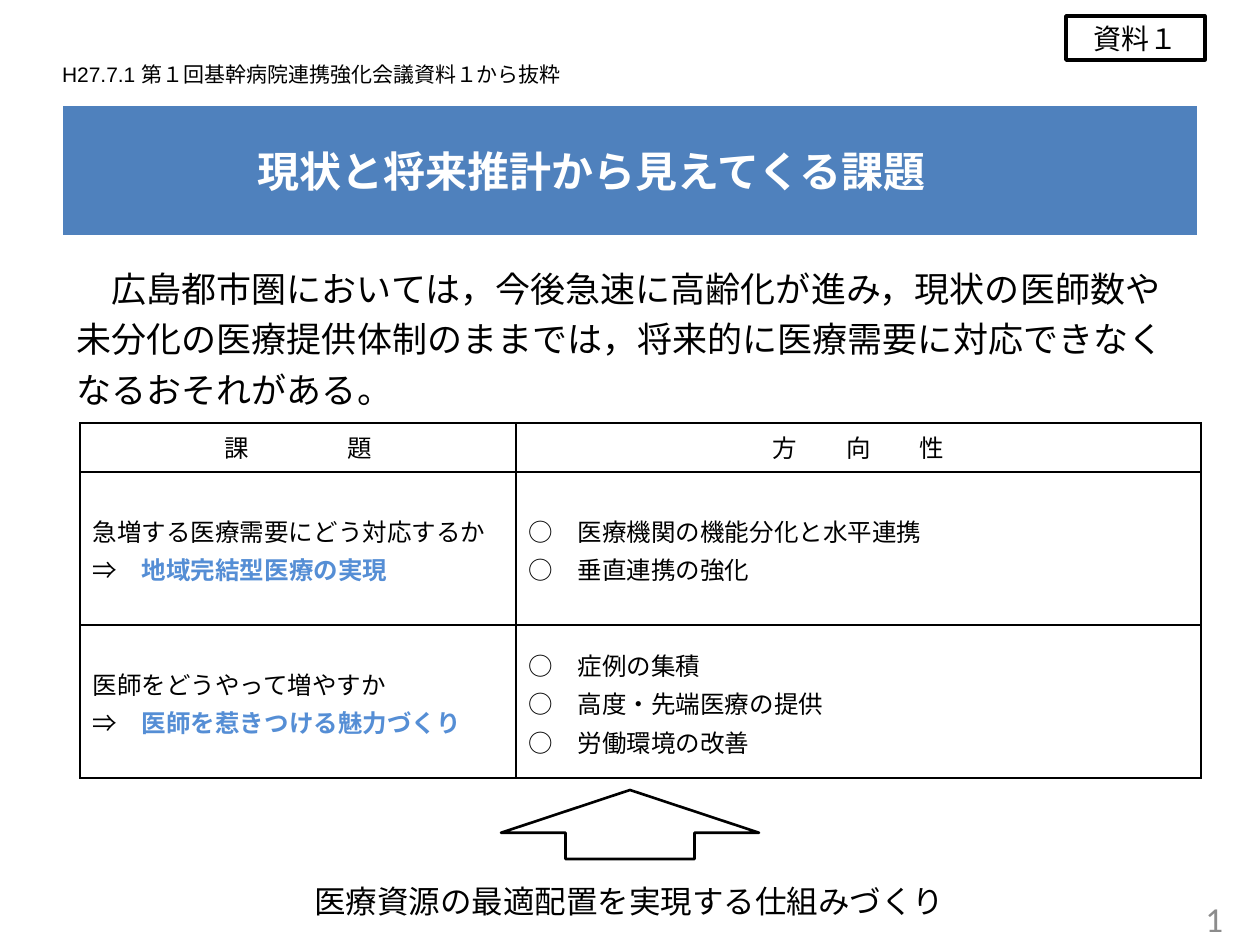
from typing import NamedTuple, Optional

from lxml.etree import SubElement
from pptx import Presentation
from pptx.dml.color import RGBColor
from pptx.enum.lang import MSO_LANGUAGE_ID as Lang
from pptx.enum.shapes import MSO_SHAPE as Shape
from pptx.enum.text import MSO_ANCHOR as Anchor, PP_ALIGN as Align
from pptx.oxml import parse_xml
from pptx.oxml.ns import nsdecls, qn
from pptx.util import Pt

BLACK = RGBColor(0x00, 0x00, 0x00)
WHITE = RGBColor(0xFF, 0xFF, 0xFF)
BLUE = RGBColor(0x4F, 0x81, 0xBD)
LIGHT_BLUE = RGBColor(0x55, 0x8E, 0xD5)
GRAY = RGBColor(0x8C, 0x8C, 0x8C)
ARIAL, CALIBRI, NOTO = "Arial", "Calibri", "Noto Sans CJK JP"
SCALE = 914400 / 126


def px(n: int) -> int:
    return round(n * SCALE)


class Box(NamedTuple):
    left: int
    top: int
    width: int
    height: int

    def emu(self) -> list[int]:
        return [px(n) for n in self]


class Run(NamedTuple):
    text: str
    size: int = 14
    font: str = ARIAL
    color: RGBColor = BLACK
    bold: bool = False
    spacing: int = 0


class Para(NamedTuple):
    runs: list[Run]
    align: Align = Align.LEFT
    spacing: Optional[Pt] = None
    indent: int = 0


class Label(NamedTuple):
    box: Box
    para: Para
    inset: tuple[int, int, int, int] = (13, 6, 13, 6)


def set_all(obj, values: dict) -> None:
    for name, value in values.items():
        setattr(obj, name, value)


def write(tf, paras: list[Para]) -> None:
    for i, para in enumerate(paras):
        p = tf.paragraphs[0] if i == 0 else tf.add_paragraph()
        set_all(p, {"alignment": para.align, "line_spacing": para.spacing})
        if para.indent:
            p._p.get_or_add_pPr().set("indent", str(Pt(para.indent)))
        for run in para.runs:
            r = p.add_run()
            r.text = run.text
            set_all(r.font, {"name": run.font, "size": Pt(run.size), "bold": run.bold,
                             "language_id": Lang.JAPANESE})
            r.font.color.rgb = run.color
            rPr = r._r.get_or_add_rPr()
            SubElement(rPr, qn("a:ea")).set("typeface", NOTO)
            if run.spacing:
                rPr.set("spc", str(run.spacing * 100))


def fill_frame(tf, label: Label) -> None:
    left, top, right, bottom = [px(n) for n in label.inset]
    set_all(tf, {"word_wrap": True, "vertical_anchor": Anchor.MIDDLE,
                 "margin_left": left, "margin_top": top,
                 "margin_right": right, "margin_bottom": bottom})
    write(tf, [label.para])


def add_label(s, label: Label) -> None:
    fill_frame(s.shapes.add_textbox(*label.box.emu()).text_frame, label)


def add_outline(s, kind: Shape, box: Box, width: float):
    sp = s.shapes.add_shape(kind, *box.emu())
    sp.shadow.inherit = False
    sp.line.color.rgb = BLACK
    sp.line.width = Pt(width)
    return sp


def add_borders(cell) -> None:
    tcPr = cell._tc.get_or_add_tcPr()
    for i, side in enumerate(("lnL", "lnR", "lnT", "lnB")):
        tcPr.insert(i, parse_xml(
            f'<a:{side} {nsdecls("a")} w="{Pt(1)}"><a:solidFill>'
            f'<a:srgbClr val="{BLACK}"/></a:solidFill></a:{side}>'))


def add_grid(s, left: int, top: int, cols: list[int], rows: list[int],
             cells: list[list[list[Para]]], bordered: bool) -> None:
    box = Box(left, top, sum(cols), sum(rows))
    table = s.shapes.add_table(len(rows), len(cols), *box.emu()).table
    set_all(table, {"first_row": False, "horz_banding": False})
    for col, width in zip(table.columns, cols):
        col.width = px(width)
    for i, (row, height) in enumerate(zip(table.rows, rows)):
        row.height = px(height)
        for cell, paras in zip(row.cells, cells[i]):
            cell.fill.background()
            if bordered:
                add_borders(cell)
            cell.vertical_anchor = Anchor.MIDDLE if i else Anchor.TOP
            write(cell.text_frame, paras)


def header(text: str, gap: int) -> list[Para]:
    return [Para([Run(text[:-1], spacing=gap), Run(text[-1])], Align.CENTER)]


def issue(question: str, answer: str) -> list[Para]:
    return [Para([Run(question)], spacing=Pt(22)),
            Para([Run("⇒　", font=NOTO),
                  Run(answer, font=NOTO, color=LIGHT_BLUE, bold=True)], spacing=Pt(22))]


def directions(*items: str) -> list[Para]:
    return [Para([Run(f"○　{item}")], spacing=Pt(22)) for item in items]


TITLE = Label(Box(63, 106, 1134, 129),
              Para([Run("現状と将来推計から見えてくる課題", 24, color=WHITE, bold=True)],
                   Align.CENTER), (20, 0, 97, 0))
TAG = Label(Box(1066, 16, 139, 44), Para([Run("資料１", 16)], Align.CENTER), (0, 0, 0, 0))
LABELS = [
    Label(Box(942, 893, 294, 50), Para([Run("1", 20, CALIBRI, GRAY)], Align.RIGHT)),
    Label(Box(69, 868, 1121, 66),
          Para([Run("医療資源の最適配置を実現する仕組みづくり", 18, CALIBRI)], Align.CENTER)),
    Label(Box(62, 45, 735, 59),
          Para([Run("H27.7.1 第１回基幹病院連携強化会議資料１から抜粋", 12)]), (0, 0, 0, 0)),
]
SUMMARY = Para([Run("広島都市圏においては，今後急速に高齢化が進み，現状の医師数や"
                    "未分化の医療提供体制のままでは，将来的に医療需要に対応できなく"
                    "なるおそれがある。", 20)], indent=20)
ISSUES = [
    [header("課題", 56), header("方向性", 28)],
    [issue("急増する医療需要にどう対応するか", "地域完結型医療の実現"),
     directions("医療機関の機能分化と水平連携", "垂直連携の強化")],
    [issue("医師をどうやって増やすか", "医師を惹きつける魅力づくり"),
     directions("症例の集積", "高度・先端医療の提供", "労働環境の改善")],
]


def main() -> None:
    prs = Presentation()
    set_all(prs, {"slide_width": px(1260), "slide_height": px(945)})
    s = prs.slides.add_slide(prs.slide_layouts[5])

    title = s.shapes.title
    set_all(title, dict(zip(("left", "top", "width", "height"), TITLE.box.emu())))
    title.fill.solid()
    title.fill.fore_color.rgb = BLUE
    fill_frame(title.text_frame, TITLE)

    add_grid(s, 64, 255, [1131], [168], [[[SUMMARY]]], bordered=False)
    add_grid(s, 80, 423, [436, 685], [49, 153, 153], ISSUES, bordered=True)

    arrow = add_outline(s, Shape.UP_ARROW, Box(501, 790, 258, 69), 1.5)
    arrow.fill.background()
    arrow.adjustments[0], arrow.adjustments[1] = 0.5, 0.62

    tag = add_outline(s, Shape.RECTANGLE, TAG.box, 2)
    tag.fill.solid()
    tag.fill.fore_color.rgb = WHITE
    fill_frame(tag.text_frame, TAG)

    for label in LABELS:
        add_label(s, label)
    prs.save("out.pptx")


if __name__ == "__main__":
    main()
